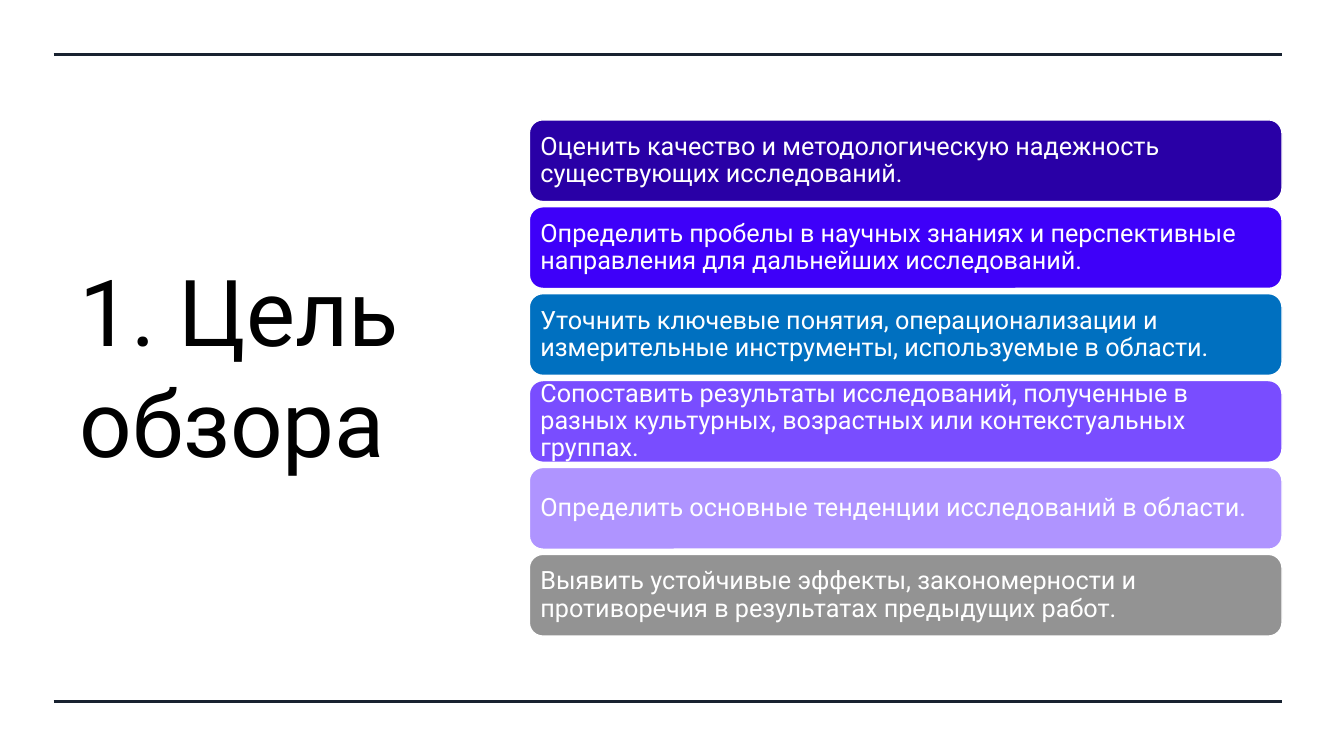
from dataclasses import dataclass

from lxml.etree import SubElement
from pptx import Presentation
from pptx.dml.color import RGBColor as Rgb
from pptx.enum.shapes import MSO_CONNECTOR as Connector, MSO_SHAPE as Preset
from pptx.enum.text import MSO_ANCHOR as Anchor, MSO_AUTO_SIZE as AutoSize, PP_ALIGN as Align
from pptx.oxml.ns import qn
from pptx.slide import Slide
from pptx.text.text import TextFrame
from pptx.util import Cm, Pt


@dataclass(frozen=True)
class Theme:
    font: str = "Roboto"
    title_size: float = 66
    goal_size: float = 18
    paper: str = "FFFFFF"
    ink: str = "000000"
    rule: str = "182230"
    rule_width: float = 2.25
    border_width: float = 1


@dataclass(frozen=True)
class Goal:
    wording: str
    fill: str


THEME = Theme()

GOALS = [
    Goal("Оценить качество и методологическую надежность существующих исследований.", "2900A6"),
    Goal("Определить пробелы в научных знаниях и перспективные направления "
         "для дальнейших исследований.", "3E00F9"),
    Goal("Уточнить ключевые понятия, операционализации и измерительные инструменты, "
         "используемые в области.", "0070C0"),
    Goal("Сопоставить результаты исследований, полученные в разных культурных, "
         "возрастных или контекстуальных группах.", "794DFF"),
    Goal("Определить основные тенденции исследований в области.", "AF94FF"),
    Goal("Выявить устойчивые эффекты, закономерности и противоречия "
         "в результатах предыдущих работ.", "939393"),
]

RULE_LEFT, RULE_RIGHT = 1.35, 32.31
RULE_TOPS = (1.37, 17.68)
GOAL_LEFT, GOAL_TOP = 13.34, 3.02
GOAL_WIDTH, GOAL_HEIGHT, GOAL_PITCH = 18.97, 2.06, 2.19
GOAL_INSET = 0.18


def write(frame: TextFrame, wording: str, size: float, color: str, spacing: float) -> None:
    frame.text = wording
    frame.word_wrap = True
    frame.auto_size = AutoSize.NONE
    frame.vertical_anchor = Anchor.MIDDLE
    paragraph = frame.paragraphs[0]
    paragraph.alignment = Align.LEFT
    paragraph.line_spacing = spacing
    font = paragraph.runs[0].font
    font.name = THEME.font
    font.size = Pt(size)
    font.color.rgb = Rgb.from_string(color)


def draw_title(slide: Slide, wording: str) -> None:
    title = slide.shapes.title
    title.left, title.top = Cm(1.75), Cm(6.2)
    title.width, title.height = Cm(12.34), Cm(5.99)
    title.fill.solid()
    title.fill.fore_color.rgb = Rgb.from_string(THEME.paper)
    write(title.text_frame, wording, THEME.title_size, THEME.ink, 1.0)


def draw_rule(slide: Slide, top: float) -> None:
    rule = slide.shapes.add_connector(
        Connector.STRAIGHT, Cm(RULE_LEFT), Cm(top), Cm(RULE_RIGHT), Cm(top))
    rule.line.color.rgb = Rgb.from_string(THEME.rule)
    rule.line.width = Pt(THEME.rule_width)
    SubElement(rule.element.spPr, qn("a:effectLst"))


def draw_goal(slide: Slide, goal: Goal, row: int) -> None:
    card = slide.shapes.add_shape(
        Preset.ROUNDED_RECTANGLE, Cm(GOAL_LEFT), Cm(GOAL_TOP + row * GOAL_PITCH),
        Cm(GOAL_WIDTH), Cm(GOAL_HEIGHT))
    card.shadow.inherit = False
    card.fill.solid()
    card.fill.fore_color.rgb = Rgb.from_string(goal.fill)
    card.line.color.rgb = Rgb.from_string(THEME.paper)
    card.line.width = Pt(THEME.border_width)
    frame = card.text_frame
    frame.margin_left = frame.margin_right = Cm(GOAL_INSET)
    frame.margin_top = frame.margin_bottom = Cm(GOAL_INSET)
    write(frame, goal.wording, THEME.goal_size, THEME.paper, 0.9)


def main() -> None:
    deck = Presentation()
    deck.slide_width, deck.slide_height = Cm(33.87), Cm(19.05)
    slide = deck.slides.add_slide(deck.slide_layouts.get_by_name("Title Only"))
    draw_title(slide, "1. Цель обзора")
    for top in RULE_TOPS:
        draw_rule(slide, top)
    for row, goal in enumerate(GOALS):
        draw_goal(slide, goal, row)
    deck.save("out.pptx")


if __name__ == "__main__":
    main()
